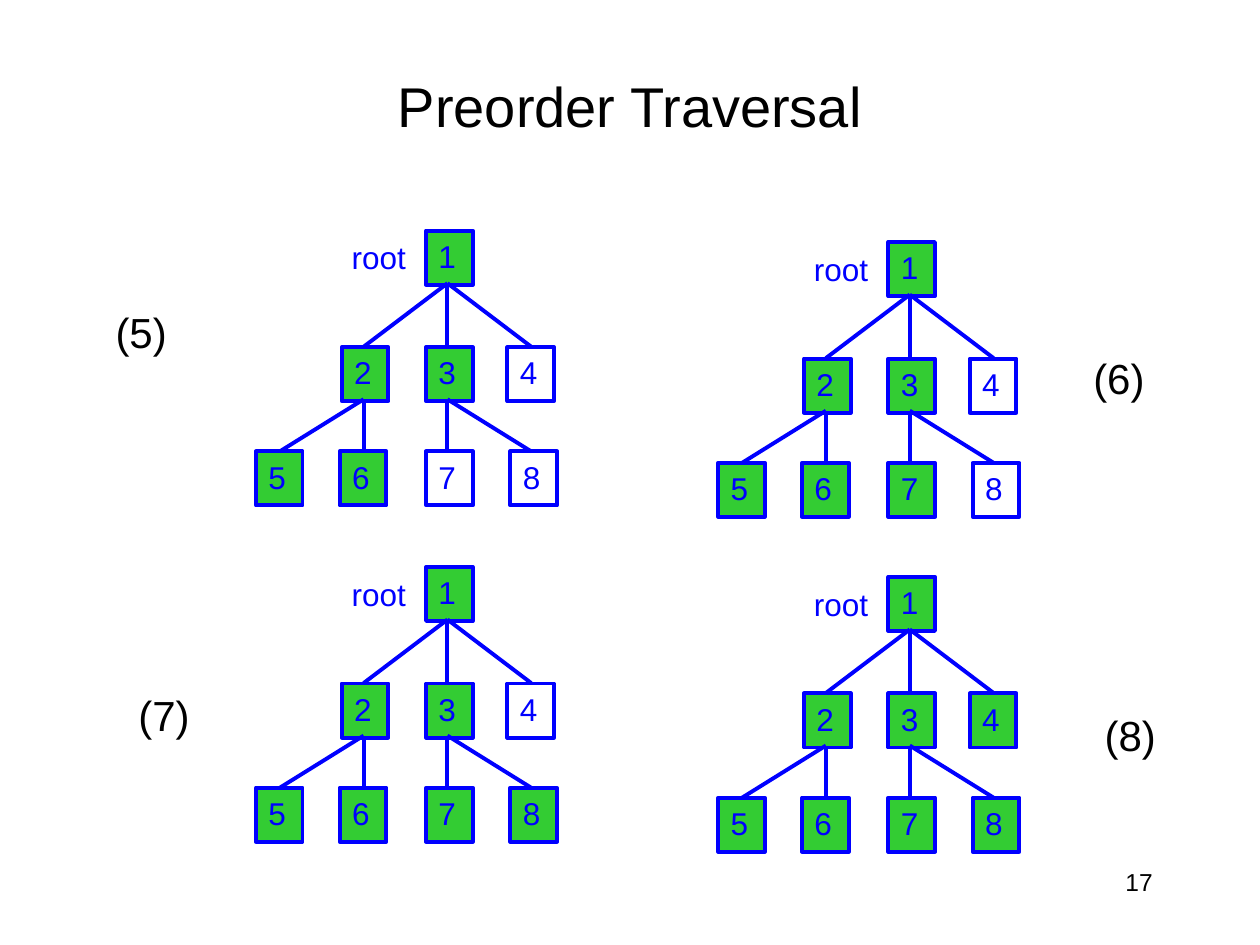
"""Build a slide with steps five to eight of a preorder tree traversal."""
from pptx import Presentation
from pptx.dml.color import RGBColor
from pptx.enum.shapes import MSO_CONNECTOR, MSO_SHAPE
from pptx.enum.text import MSO_ANCHOR, MSO_AUTO_SIZE, PP_ALIGN
from pptx.oxml.ns import qn
from pptx.util import Cm, Pt
from lxml.etree import SubElement

BLACK = RGBColor(0x00, 0x00, 0x00)
BLUE = RGBColor(0x00, 0x00, 0xFF)
GREEN = RGBColor(0x33, 0xCC, 0x33)

NODE_WIDTH, NODE_HEIGHT = 0.94, 1.09
NODE_OFFSETS = {
    1: (0, 0),
    2: (-1.7, 2.35), 3: (0, 2.35), 4: (1.64, 2.35),
    5: (-3.43, 4.45), 6: (-1.74, 4.45), 7: (0, 4.45), 8: (1.7, 4.45),
}
JOINT_LEFT, JOINT_STEP = 0.43, 1.69
EDGE_LEVELS = [
    (1.06, 2.34, [(0, 0), (0, -1), (0, 1)]),
    (3.4, 4.45, [(-1, -2), (-1, -1), (0, 0), (0, 1)]),
]
TREES = [
    ("(5)", 8.59, 4.65, {1, 2, 3, 5, 6}, 2.08, 6.05),
    ("(6)", 17.91, 4.88, {1, 2, 3, 5, 6, 7}, 21.79, 6.99),
    ("(7)", 8.59, 11.43, {1, 2, 3, 5, 6, 7, 8}, 2.54, 13.77),
    ("(8)", 17.91, 11.63, set(NODE_OFFSETS), 22.02, 14.17),
]


def write_text(shape, text, size, color, align=PP_ALIGN.LEFT):
    frame = shape.text_frame
    frame.text = text
    frame.word_wrap = False
    frame.auto_size = MSO_AUTO_SIZE.SHAPE_TO_FIT_TEXT
    frame.vertical_anchor = MSO_ANCHOR.TOP
    paragraph = frame.paragraphs[0]
    paragraph.alignment = align
    paragraph.font.name = "Arial"
    paragraph.font.size = Pt(size)
    paragraph.font.color.rgb = color


def add_label(text, left, top, width, height, size, color):
    box = slide.shapes.add_textbox(Cm(left), Cm(top), Cm(width), Cm(height))
    write_text(box, text, size, color)
    return box


presentation = Presentation()
presentation.slide_width = Cm(25.4)
presentation.slide_height = Cm(19.05)
slide = presentation.slides.add_slide(presentation.slide_layouts[5])

title = slide.shapes.title
title.left, title.top, title.width, title.height = Cm(1.9), Cm(1.06), Cm(21.6), Cm(2.12)
write_text(title, "Preorder Traversal", 32, BLACK, PP_ALIGN.CENTER)
title.text_frame.word_wrap = True
title.text_frame.auto_size = MSO_AUTO_SIZE.NONE
title.text_frame.vertical_anchor = MSO_ANCHOR.MIDDLE

page_number = add_label("17", 18.2, 17.35, 5.29, 1.27, 14, BLACK)
page_number.text_frame.word_wrap = True
page_number.text_frame.auto_size = MSO_AUTO_SIZE.NONE
page_number.text_frame.paragraphs[0].alignment = PP_ALIGN.RIGHT

for step, left, top, visited, step_left, step_top in TREES:
    for number, (across, down) in NODE_OFFSETS.items():
        node = slide.shapes.add_shape(
            MSO_SHAPE.RECTANGLE, Cm(left + across), Cm(top + down),
            Cm(NODE_WIDTH), Cm(NODE_HEIGHT))
        node.shadow.inherit = False
        node.line.color.rgb = BLUE
        node.line.width = Pt(2.25)
        if number in visited:
            node.fill.solid()
            node.fill.fore_color.rgb = GREEN
        else:
            node.fill.background()
        write_text(node, str(number), 18, BLUE)

    for start, end, edges in EDGE_LEVELS:
        for parent, child in edges:
            edge = slide.shapes.add_connector(
                MSO_CONNECTOR.STRAIGHT,
                Cm(left + JOINT_LEFT + parent * JOINT_STEP), Cm(top + start),
                Cm(left + JOINT_LEFT + child * JOINT_STEP), Cm(top + end))
            edge.line.color.rgb = BLUE
            edge.line.width = Pt(2.25)
            SubElement(edge._element.spPr, qn("a:effectLst"))

    add_label("root", left - 1.75, top + 0.03, 1.6, 1.02, 18, BLUE)
    add_label(step, step_left, step_top, 1.55, 1.27, 24, BLACK)

presentation.save("out.pptx")
